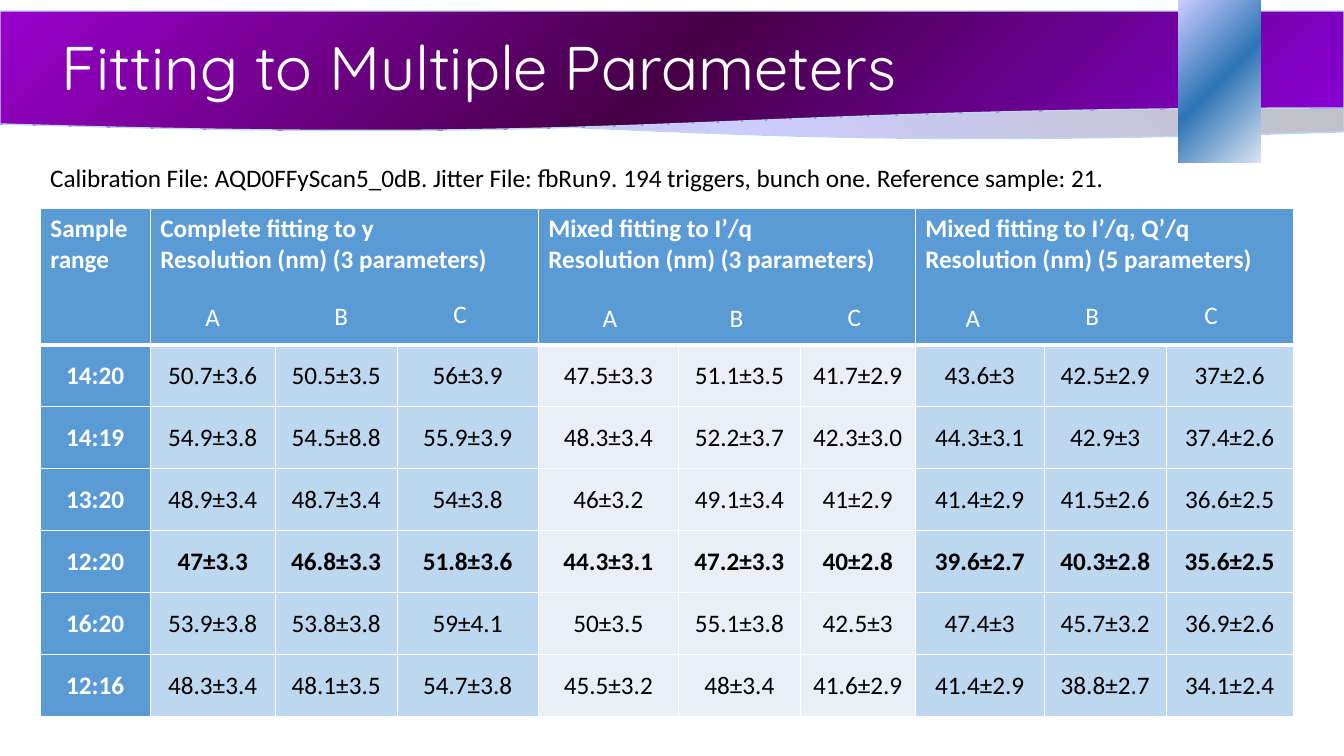
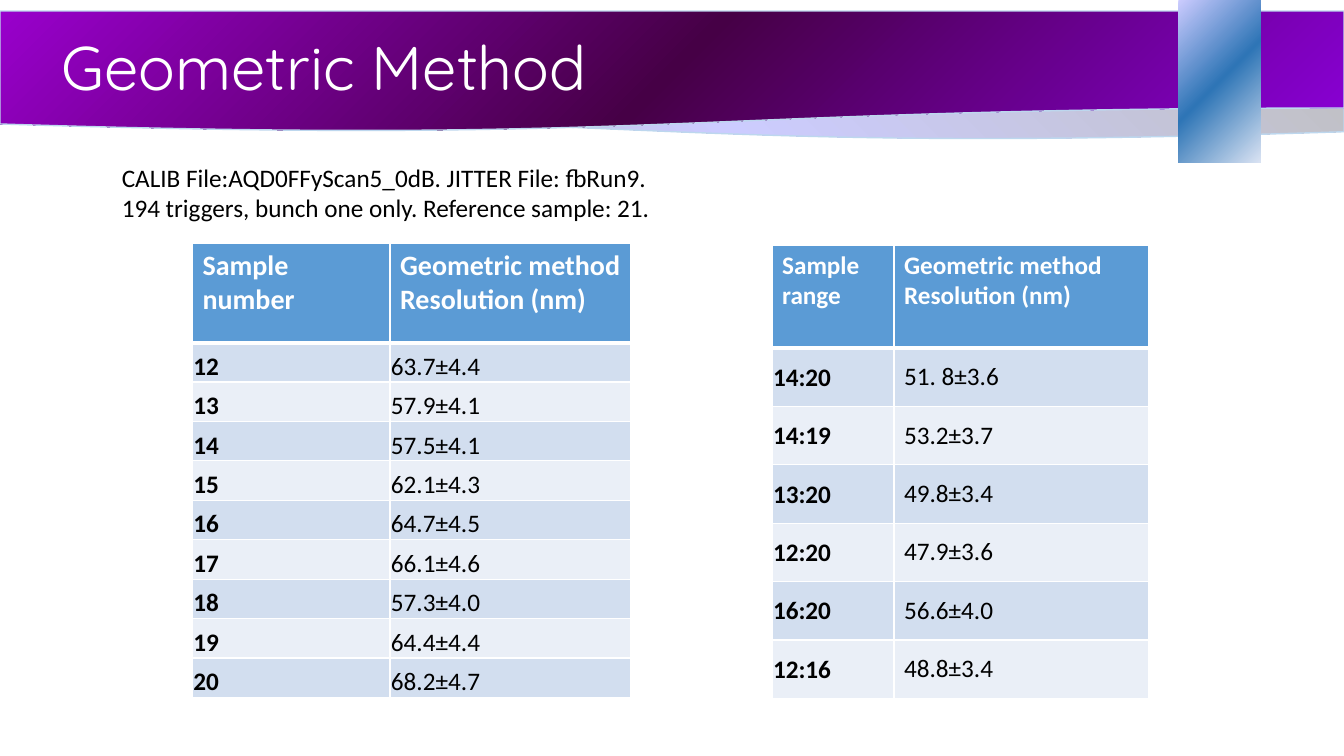
import pptx
import pptx.dml.color
import pptx.enum.shapes
import pptx.enum.text
import pptx.oxml
import pptx.oxml.ns
import pptx.util

Pt = pptx.util.Pt
RGB = pptx.dml.color.RGBColor
SHAPE = pptx.enum.shapes.MSO_SHAPE
ALIGN = pptx.enum.text.PP_ALIGN
ANCHOR = pptx.enum.text.MSO_ANCHOR

WHITE = RGB(0xFF, 0xFF, 0xFF)
BLACK = RGB(0, 0, 0)
HEAD_BLUE = RGB(0x5B, 0x9B, 0xD5)
LIGHT_BLUE = RGB(0xBD, 0xD7, 0xEE)
BAND_DARK = RGB(0xD2, 0xDE, 0xEF)
BAND_LIGHT = RGB(0xEA, 0xEF, 0xF7)
GREY = RGB(0xA6, 0xA6, 0xA6)
SILVER = RGB(0xBF, 0xBF, 0xBF)
LAVENDER = RGB(0xCC, 0xCC, 0xFF)
VIOLET = RGB(0x8A, 0, 0xD6)
PLUM = RGB(0x46, 0, 0x46)
PURPLE = RGB(0x99, 0, 0xCC)
PALE_BLUE = RGB(0xDA, 0xE3, 0xF3)
DEEP_BLUE = RGB(0x2E, 0x75, 0xB6)

BODY_FONT = "Calibri"
TITLE_FONT = "Quicksand"
TIGHT = (0.7, 0.7, 0.7, 0)
ROOMY = (7.2, 3.6, 7.2, 3.6)
LINEAR = '<a:lin ang="13500000" scaled="0"/>'
RADIAL = '<a:path path="circle"><a:fillToRect l="100000" t="100000"/></a:path>'

# Content: slide 1
FIT_TITLE = "Fitting to Multiple Parameters"
FIT_CAPTION = ["Calibration File: AQD0FFyScan5_0dB. Jitter File: fbRun9. "
               "194 triggers, bunch one. Reference sample: 21."]
FIT_HEADS = [
    ["Sample range"],
    ["Complete fitting to y", "Resolution (nm) (3 parameters)"],
    ["Mixed fitting to I’/q", "Resolution (nm) (3 parameters)"],
    ["Mixed fitting to I’/q, Q’/q Resolution (nm) (5 parameters)"],
]
FIT_ROWS = [
    ("14:20", "50.7±3.6", "50.5±3.5", "56±3.9", "47.5±3.3", "51.1±3.5",
     "41.7±2.9", "43.6±3", "42.5±2.9", "37±2.6"),
    ("14:19", "54.9±3.8", "54.5±8.8", "55.9±3.9", "48.3±3.4", "52.2±3.7",
     "42.3±3.0", "44.3±3.1", "42.9±3", "37.4±2.6"),
    ("13:20", "48.9±3.4", "48.7±3.4", "54±3.8", "46±3.2", "49.1±3.4",
     "41±2.9", "41.4±2.9", "41.5±2.6", "36.6±2.5"),
    ("12:20", "47±3.3", "46.8±3.3", "51.8±3.6", "44.3±3.1", "47.2±3.3",
     "40±2.8", "39.6±2.7", "40.3±2.8", "35.6±2.5"),
    ("16:20", "53.9±3.8", "53.8±3.8", "59±4.1", "50±3.5", "55.1±3.8",
     "42.5±3", "47.4±3", "45.7±3.2", "36.9±2.6"),
    ("12:16", "48.3±3.4", "48.1±3.5", "54.7±3.8", "45.5±3.2", "48±3.4",
     "41.6±2.9", "41.4±2.9", "38.8±2.7", "34.1±2.4"),
]
BEST_RANGE = "12:20"
FIT_WIDTHS = [78.5, 89.3, 87.1, 100.8, 100.1, 87.1, 82.1, 92.2, 87.1, 90.7]
# Left and top of the A, B and C labels under each heading
LABEL_SPOTS = [
    [(139.7, 211.7), (231.8, 211), (316.8, 209.5)],
    [(423.4, 212.4), (514.1, 212.4), (598.3, 211.7)],
    [(682.6, 212.4), (768.2, 211), (853.2, 210.2)],
]

# Content: slide 2
GEO_TITLE = "Geometric Method"
GEO_CAPTION = ["CALIB File:AQD0FFyScan5_0dB. JITTER File: fbRun9.",
               "194 triggers, bunch one only. Reference sample: 21."]
GEO_HEAD = "Geometric method Resolution (nm)"
RANGE_ROWS = [("14:20", "51. 8±3.6"), ("14:19", "53.2±3.7"),
              ("13:20", "49.8±3.4"), ("12:20", "47.9±3.6"),
              ("16:20", "56.6±4.0"), ("12:16", "48.8±3.4")]
NUMBER_ROWS = [("12", "63.7±4.4"), ("13", "57.9±4.1"), ("14", "57.5±4.1"),
               ("15", "62.1±4.3"), ("16", "64.7±4.5"), ("17", "66.1±4.6"),
               ("18", "57.3±4.0"), ("19", "64.4±4.4"), ("20", "68.2±4.7")]


def write(tf, lines, size=18, color=BLACK, bold=False, font=BODY_FONT,
          align=ALIGN.LEFT, spacing=None):
    for i, line in enumerate(lines):
        p = tf.paragraphs[0] if i == 0 else tf.add_paragraph()
        p.alignment = align
        if spacing:
            p.line_spacing = spacing
        r = p.add_run()
        r.text = line
        r.font.size, r.font.bold, r.font.name = Pt(size), bold, font
        r.font.color.rgb = color


def add_text(s, box, lines, **fmt):
    tf = s.shapes.add_textbox(*map(Pt, box)).text_frame
    tf.word_wrap = True
    write(tf, lines, **fmt)


def set_gradient(sp, colors, direction):
    sp.fill.gradient()
    old = sp.element.spPr.find(pptx.oxml.ns.qn("a:gradFill"))
    stops = "".join(f'<a:gs pos="{pos}"><a:srgbClr val="{c}"/></a:gs>'
                    for pos, c in zip((0, 50000, 100000), colors))
    new = pptx.oxml.parse_xml(
        f'<a:gradFill {pptx.oxml.ns.nsdecls("a")} rotWithShape="1">'
        f'<a:gsLst>{stops}</a:gsLst>{direction}</a:gradFill>')
    old.getparent().replace(old, new)


def set_borders(cell, top=1, bottom=1):
    widths = {"lnL": 1, "lnR": 1, "lnT": top, "lnB": bottom}
    tc_pr = cell._tc.get_or_add_tcPr()
    for i, (side, width) in enumerate(widths.items()):
        tc_pr.insert(i, pptx.oxml.parse_xml(
            f'<a:{side} {pptx.oxml.ns.nsdecls("a")} w="{Pt(width)}">'
            f'<a:solidFill><a:srgbClr val="{WHITE}"/></a:solidFill></a:{side}>'))


def fill_cell(cell, lines, fill, anchor=ANCHOR.TOP, insets=ROOMY, **fmt):
    cell.fill.solid()
    cell.fill.fore_color.rgb = fill
    cell.vertical_anchor = anchor
    (cell.margin_left, cell.margin_top,
     cell.margin_right, cell.margin_bottom) = map(Pt, insets)
    write(cell.text_frame, lines, **fmt)


def add_table(s, left, top, widths, height, head_height, n_rows):
    table = s.shapes.add_table(n_rows + 1, len(widths), Pt(left), Pt(top),
                               Pt(sum(widths)), Pt(height)).table
    table.horz_banding = False
    for col, width in zip(table.columns, widths):
        col.width = Pt(width)
    for i, row in enumerate(table.rows):
        row.height = Pt((height - head_height) / n_rows if i else head_height)
        for cell in row.cells:
            set_borders(cell, top=3 if i == 1 else 1, bottom=1 if i else 3)
    return table


def add_geometric_table(s, box, head_height, label, rows, head_size, anchor,
                        value_insets):
    left, top, widths, height = box
    table = add_table(s, left, top, widths, height, head_height, len(rows))
    for j, text in enumerate((label, GEO_HEAD)):
        fill_cell(table.cell(0, j), [text], HEAD_BLUE, size=head_size,
                  color=WHITE, bold=True)
    for i, row in enumerate(rows, 1):
        for j, text in enumerate(row):
            fill_cell(table.cell(i, j), [text],
                      BAND_DARK if i % 2 else BAND_LIGHT, anchor,
                      value_insets if j else TIGHT, bold=j == 0)


def add_bands(layout, s):
    """Draw the bands and hand them to the layout, behind its title."""
    for ph in list(layout.placeholders):
        if ph.placeholder_format.type != pptx.enum.shapes.PP_PLACEHOLDER.TITLE:
            ph.element.getparent().remove(ph.element)
    bands = [
        (SHAPE.FLOWCHART_DOCUMENT, (0, 9.4, 960, 90.7),
         (GREY, LAVENDER, SILVER), LINEAR, True),
        (SHAPE.FLOWCHART_DOCUMENT, (0, 7.9, 960, 86.4),
         (VIOLET, PLUM, PURPLE), LINEAR, False),
        (SHAPE.RECTANGLE, (841.7, 0, 59, 116),
         (PALE_BLUE, DEEP_BLUE, LAVENDER), RADIAL, False),
    ]
    for i, (kind, box, colors, direction, flip) in enumerate(bands):
        sp = s.shapes.add_shape(kind, *map(Pt, box))
        sp.shadow.inherit = False
        set_gradient(sp, colors, direction)
        if kind == SHAPE.RECTANGLE:
            sp.line.fill.background()
        else:
            sp.line.color.rgb = LIGHT_BLUE
            sp.line.width = Pt(1)
        if flip:
            sp.element.spPr.xfrm.set("flipH", "1")
        layout.shapes.element.insert(2 + i, sp.element)


def add_slide(prs, layout, title):
    s = prs.slides.add_slide(layout)
    sp = s.shapes.title
    sp.left, sp.top, sp.width, sp.height = map(Pt, (36.7, 8.6, 828, 83.5))
    sp.text_frame.vertical_anchor = ANCHOR.MIDDLE
    write(sp.text_frame, [title], size=44, color=WHITE, font=TITLE_FONT,
          spacing=0.9)
    return s


def build_fitting(s):
    table = add_table(s, 28.8, 149, FIT_WIDTHS, 362.9, 97.2, len(FIT_ROWS))
    for k, lines in enumerate(FIT_HEADS):
        col = max(0, 3 * k - 2)
        if k:
            table.cell(0, col).merge(table.cell(0, col + 2))
        fill_cell(table.cell(0, col), lines, HEAD_BLUE, color=WHITE, bold=True)
    group_fills = [LIGHT_BLUE, BAND_LIGHT, LIGHT_BLUE]
    for i, row in enumerate(FIT_ROWS, 1):
        for j, text in enumerate(row):
            fill_cell(table.cell(i, j), [text],
                      group_fills[(j - 1) // 3] if j else HEAD_BLUE,
                      ANCHOR.MIDDLE, TIGHT, align=ALIGN.CENTER,
                      color=BLACK if j else WHITE,
                      bold=j == 0 or row[0] == BEST_RANGE)
    add_text(s, (28.8, 112.3, 789.8, 72.7), FIT_CAPTION)
    for spots in LABEL_SPOTS:
        for letter, (left, top) in zip("ABC", spots):
            add_text(s, (left, top, 49.7, 28.8), [letter], color=WHITE)


def build_geometric(s):
    add_geometric_table(s, (551.5, 175, (87.1, 182.2), 324), 73.4,
                        "Sample range", RANGE_ROWS, 18, ANCHOR.MIDDLE, ROOMY)
    add_text(s, (79.9, 112.3, 738, 94.3), GEO_CAPTION)
    add_geometric_table(s, (137.5, 174.2, (141.1, 172), 324), 70.6,
                        "Sample number", NUMBER_ROWS, 20, ANCHOR.BOTTOM, TIGHT)


def main():
    prs = pptx.Presentation()
    prs.slide_width, prs.slide_height = Pt(960), Pt(540)
    layout = prs.slide_layouts[5]
    s = add_slide(prs, layout, FIT_TITLE)
    add_bands(layout, s)
    build_fitting(s)
    build_geometric(add_slide(prs, layout, GEO_TITLE))
    prs.save("out.pptx")


if __name__ == "__main__":
    main()
